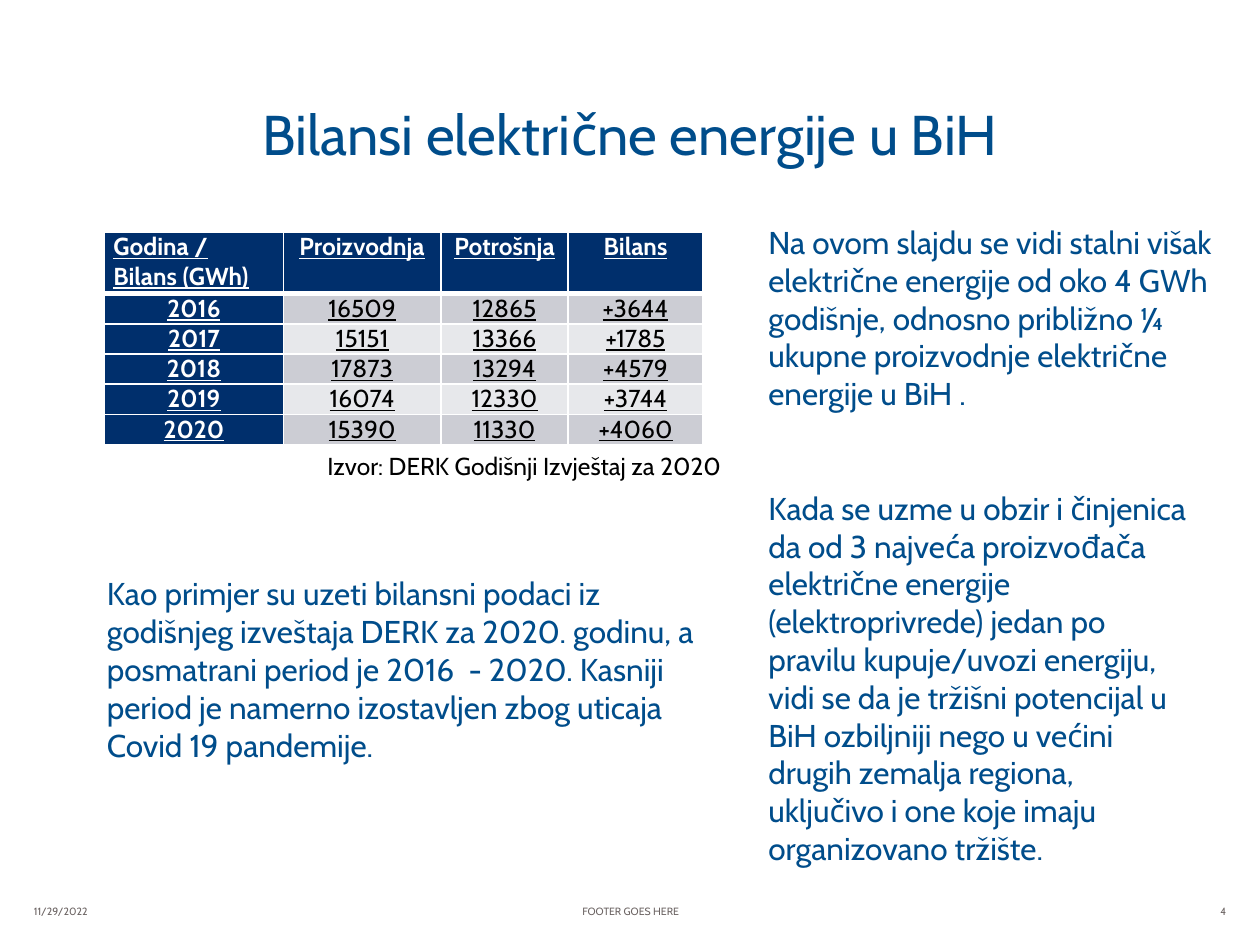
from dataclasses import dataclass

from lxml.etree import SubElement
from pptx import Presentation
from pptx.dml.color import RGBColor
from pptx.enum.text import MSO_ANCHOR, MSO_AUTO_SIZE, PP_ALIGN
from pptx.oxml.ns import qn
from pptx.util import Inches, Pt

COLORS = {
    "title": "004D8B",
    "navy": "002F6C",
    "footer": "6C6463",
    "odd": "CCCDD4",
    "even": "E7E8EB",
    "white": "FFFFFF",
    "black": "000000",
}
FONT = "Cabin"


@dataclass
class TextBlock:
    text: str
    left: float
    top: float
    width: float
    height: float
    size: float = 18
    color: str = "title"
    align: PP_ALIGN = PP_ALIGN.LEFT
    anchor: MSO_ANCHOR = MSO_ANCHOR.TOP


TITLE = TextBlock("Bilansi električne energije u BiH", 0.75, 0.73, 8.5, 0.64,
                  32, align=PP_ALIGN.CENTER, anchor=MSO_ANCHOR.BOTTOM)

BODY = [
    TextBlock("Na ovom slajdu se vidi stalni višak električne energije od oko "
              "4 GWh godišnje, odnosno približno ¼ ukupne proizvodnje "
              "električne energije u BiH .", 6, 1.72, 3.83, 1.62),
    TextBlock("Kada se uzme u obzir i činjenica da od 3 najveća proizvođača "
              "električne energije (elektroprivrede) jedan po pravilu "
              "kupuje/uvozi energiju, vidi se da je tržišni potencijal u BiH "
              "ozbiljniji nego u većini drugih zemalja regiona, uključivo i "
              "one koje imaju organizovano tržište.", 6, 3.83, 3.58, 2.83),
    TextBlock("Izvor: DERK Godišnji Izvještaj za 2020", 2.5, 3.53, 3.42, 0.34,
              14, "black"),
    TextBlock("Kao primjer su uzeti bilansni podaci iz godišnjeg izveštaja "
              "DERK za 2020. godinu, a posmatrani period je 2016  - 2020. "
              "Kasniji period je namerno izostavljen zbog uticaja Covid 19 "
              "pandemije.", 0.75, 4.51, 5, 1.62),
]

FOOTERS = [
    TextBlock(text, left, 7.13, width, 0.2, 6, "footer", align, MSO_ANCHOR.MIDDLE)
    for text, left, width, align in [
        ("11/29/2022", 0.17, 2.33, PP_ALIGN.LEFT),
        ("FOOTER GOES HERE", 3.42, 3.17, PP_ALIGN.CENTER),
        ("4", 7.5, 2.33, PP_ALIGN.RIGHT),
    ]
]

HEADERS = ["Godina / Bilans (GWh)", "Proizvodnja", "Potrošnja", "Bilans"]
BALANCES = [
    ("2016", "16509", "12865", "+3644"),
    ("2017", "15151", "13366", "+1785"),
    ("2018", "17873", "13294", "+4579"),
    ("2019", "16074", "12330", "+3744"),
    ("2020", "15390", "11330", "+4060"),
]
COL_WIDTHS = [1.42, 1.25, 1.01, 1.07]
ROW_HEIGHTS = [0.49] + [0.24] * len(BALANCES)


def rgb(name: str) -> RGBColor:
    return RGBColor.from_string(COLORS[name])


def write(tf, text: str, *, size: float, color: str, align=PP_ALIGN.LEFT,
          bold=False, underline=False) -> None:
    p = tf.paragraphs[0]
    p.alignment = align
    p.line_spacing = 1.0
    r = p.add_run()
    r.text = text
    r.font.name = FONT
    r.font.size = Pt(size)
    r.font.bold = bold
    r.font.underline = underline
    r.font.color.rgb = rgb(color)


def fill_block(sp, block: TextBlock) -> None:
    sp.left, sp.top = Inches(block.left), Inches(block.top)
    sp.width, sp.height = Inches(block.width), Inches(block.height)
    tf = sp.text_frame
    tf.word_wrap = True
    tf.auto_size = MSO_AUTO_SIZE.NONE
    tf.vertical_anchor = block.anchor
    write(tf, block.text, size=block.size, color=block.color, align=block.align)


def set_borders(cell, bottom: float) -> None:
    tc_pr = cell._tc.get_or_add_tcPr()
    for i, (side, width) in enumerate(
            [("lnL", 1), ("lnR", 1), ("lnT", 1), ("lnB", bottom)]):
        ln = SubElement(tc_pr, qn(f"a:{side}"), w=str(Pt(width)))
        fill = SubElement(ln, qn("a:solidFill"))
        SubElement(fill, qn("a:srgbClr"), val=COLORS["white"])
        tc_pr.insert(i, ln)


def add_balance_table(slide) -> None:
    rows = [HEADERS, *BALANCES]
    table = slide.shapes.add_table(
        len(rows), len(HEADERS), Inches(0.83), Inches(1.84),
        Inches(sum(COL_WIDTHS)), Inches(sum(ROW_HEIGHTS))).table
    table.first_col = True
    for col, width in zip(table.columns, COL_WIDTHS):
        col.width = Inches(width)
    for row, height in zip(table.rows, ROW_HEIGHTS):
        row.height = Inches(height)
    for i, values in enumerate(rows):
        for j, text in enumerate(values):
            cell = table.cell(i, j)
            heading = i == 0 or j == 0
            cell.margin_left = cell.margin_right = Inches(0.07)
            cell.margin_top = cell.margin_bottom = 0
            cell.fill.solid()
            cell.fill.fore_color.rgb = rgb(
                "navy" if heading else "odd" if i % 2 else "even")
            set_borders(cell, bottom=3 if i == 0 else 1)
            write(cell.text_frame, text, size=14, bold=heading, underline=True,
                  color="white" if heading else "black",
                  align=PP_ALIGN.LEFT if i == j == 0 else PP_ALIGN.CENTER)


def main() -> None:
    prs = Presentation()
    prs.slide_width, prs.slide_height = Inches(10), Inches(7.5)
    slide = prs.slides.add_slide(prs.slide_layouts[5])
    fill_block(slide.shapes.title, TITLE)
    add_balance_table(slide)
    for block in BODY + FOOTERS:
        fill_block(slide.shapes.add_textbox(0, 0, 0, 0), block)
    prs.save("out.pptx")


if __name__ == "__main__":
    main()
